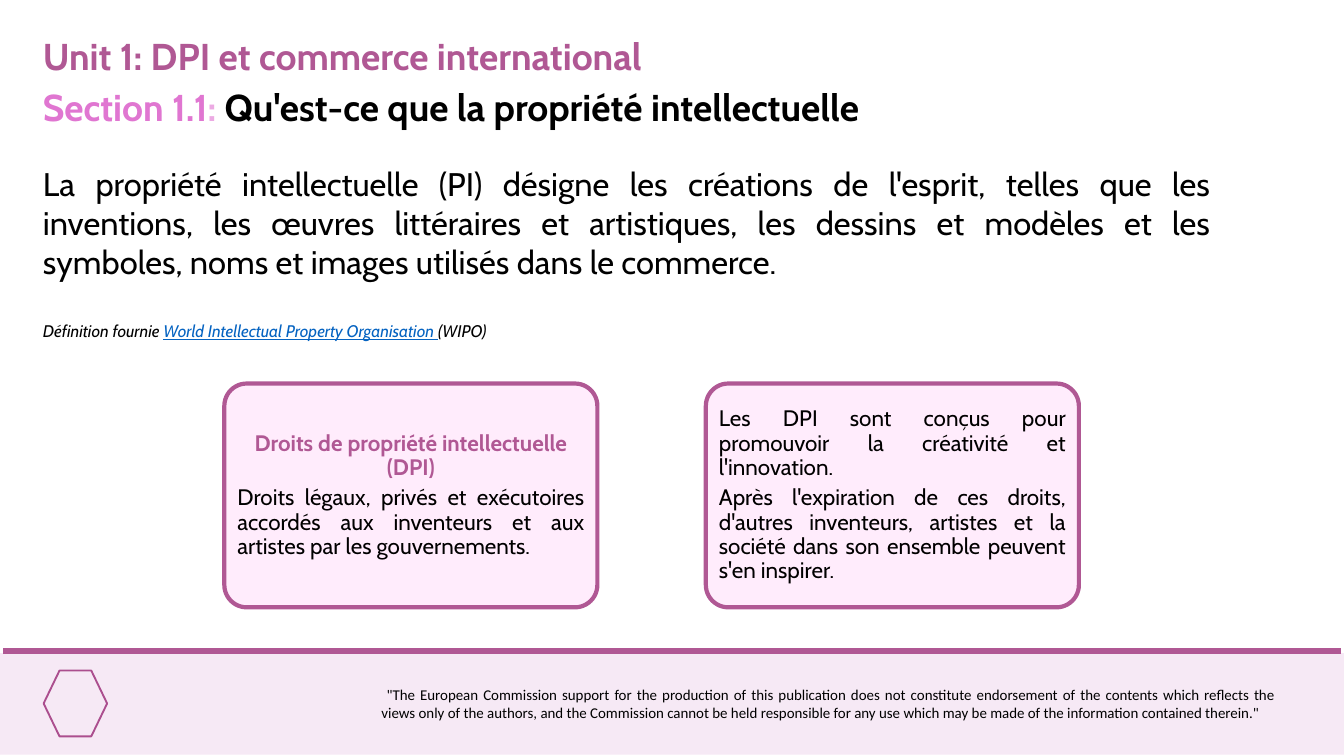
from lxml import etree
from pptx import Presentation
from pptx.dml.color import RGBColor
from pptx.enum.shapes import MSO_CONNECTOR, MSO_SHAPE
from pptx.enum.text import MSO_ANCHOR, MSO_AUTO_SIZE, PP_ALIGN
from pptx.oxml.ns import qn
from pptx.util import Cm, Pt

LEFT, CENTER, JUSTIFY = PP_ALIGN.LEFT, PP_ALIGN.CENTER, PP_ALIGN.JUSTIFY
TOP, MIDDLE = MSO_ANCHOR.TOP, MSO_ANCHOR.MIDDLE
NO_AUTOFIT = MSO_AUTO_SIZE.NONE
RECTANGLE, ROUNDED, HEXAGON = MSO_SHAPE.RECTANGLE, MSO_SHAPE.ROUNDED_RECTANGLE, MSO_SHAPE.HEXAGON
STRAIGHT = MSO_CONNECTOR.STRAIGHT

COLORS = {
    "black": "000000",
    "plum": "B05894",
    "emblem": "AB4E8E",
    "pink": "E076D1",
    "pale_pink": "ECAAE3",
    "card": "FFECFC",
    "band": "F6E9F5",
    "link": "0563C1",
}


class SlideBuilder:
    def __init__(self, slide, font="Cabin"):
        self.slide = slide
        self.font = font

    def color(self, name):
        return RGBColor.from_string(COLORS[name])

    def fill_text(self, frame, paragraphs, anchor=TOP):
        """Each paragraph is (format values, [(text, colour, font values), ...])."""
        for name, value in {"word_wrap": True, "auto_size": NO_AUTOFIT,
                            "vertical_anchor": anchor}.items():
            setattr(frame, name, value)
        for index, (layout, runs) in enumerate(paragraphs):
            paragraph = frame.paragraphs[0] if index == 0 else frame.add_paragraph()
            properties = paragraph._p.get_or_add_pPr()
            properties.set("marL", "0")
            properties.set("indent", "0")
            etree.SubElement(properties, qn("a:buNone"))
            for name, value in {"space_before": Pt(0), **layout}.items():
                setattr(paragraph, name, value)
            for text, color, style in runs:
                run = paragraph.add_run()
                run.text = text
                run.font.color.rgb = self.color(color)
                for name, value in {"name": self.font, **style}.items():
                    setattr(run.font, name, value)

    def placeholder(self, index, box, paragraphs):
        holder = self.slide.placeholders[index]
        holder.left, holder.top, holder.width, holder.height = map(Cm, box)
        self.fill_text(holder.text_frame, paragraphs)

    def text(self, box, paragraphs):
        frame = self.slide.shapes.add_textbox(*map(Cm, box)).text_frame
        self.fill_text(frame, paragraphs)

    def shape(self, kind, box, fill=None, line=None, width=0):
        shape = self.slide.shapes.add_shape(kind, *map(Cm, box))
        shape.shadow.inherit = False
        if fill:
            shape.fill.solid()
            shape.fill.fore_color.rgb = self.color(fill)
        else:
            shape.fill.background()
        if line:
            shape.line.color.rgb = self.color(line)
            shape.line.width = Pt(width)
        else:
            shape.line.fill.background()
        return shape

    def card(self, box, paragraphs):
        card = self.shape(ROUNDED, box, "card", "plum", 4.5)
        card.adjustments[0] = 0.1
        self.fill_text(card.text_frame, paragraphs, MIDDLE)

    def rule(self, left, right, y, color, width):
        rule = self.slide.shapes.add_connector(STRAIGHT, Cm(left), Cm(y), Cm(right), Cm(y))
        rule.line.color.rgb = self.color(color)
        rule.line.width = Pt(width)
        etree.SubElement(rule._element.spPr, qn("a:effectLst"))


def main():
    deck = Presentation()
    deck.slide_width, deck.slide_height = Cm(50.8), Cm(28.58)
    builder = SlideBuilder(deck.slides.add_slide(deck.slide_layouts[1]))
    margin = 1.37
    heading = {"size": Pt(40), "bold": True}
    source = {"size": Pt(18), "italic": True}

    # Footer band with emblem and disclaimer
    builder.shape(RECTANGLE, (0, 24.69, 50.8, 3.84), "band")
    builder.rule(0.13, 50.67, 24.61, "plum", 6.75)
    builder.shape(HEXAGON, (1.65, 25.35, 2.4, 2.49), line="emblem", width=2)
    disclaimer = (
        ' "The European Commission support for the production of this publication does not '
        "constitute endorsement of the contents which reflects the views only of the authors, "
        "and the Commission cannot be held responsible for any use which may be made of the "
        'information contained therein."'
    )
    builder.text((14.17, 25.78, 34.29, 1.63), [
        ({"alignment": JUSTIFY}, [(disclaimer, "black", {"name": "Calibri", "size": Pt(16)})]),
    ])

    # Unit and section headings
    builder.placeholder(0, (margin, 1.12, 24.16, 1.96), [
        ({"alignment": LEFT}, [("Unit 1: DPI et commerce international", "plum", heading)]),
    ])
    builder.text((margin, 3.07, 39.17, 1.96), [
        ({"alignment": LEFT}, [
            ("Section 1.1", "pink", heading),
            (": ", "pale_pink", heading),
            ("Qu'est-ce que la propriété intellectuelle", "black", heading),
        ]),
    ])

    # Definition and its source
    definition = (
        "La propriété intellectuelle (PI) désigne les créations de l'esprit, telles que les "
        "inventions, les œuvres littéraires et artistiques, les dessins et modèles et les "
        "symboles, noms et images utilisés dans le commerce."
    )
    builder.placeholder(1, (margin, 6.07, 44.65, 7.01), [
        ({"alignment": JUSTIFY}, [(definition, "black", {"size": Pt(35)})]),
        ({"alignment": JUSTIFY, "space_before": Pt(42)}, [
            ("Définition fournie ", "black", source),
            ("World Intellectual Property Organisation ", "link", {**source, "underline": True}),
            ("(WIPO)", "black", source),
        ]),
    ])

    # Cards on rights and their purpose
    card_text = {"alignment": JUSTIFY, "line_spacing": 0.9, "space_after": Pt(7)}
    card_title = {**card_text, "alignment": CENTER}
    size = {"size": Pt(24)}
    rights = [
        (card_title, [("Droits de propriété intellectuelle (DPI)", "plum", {**size, "bold": True})]),
        (card_text, [("Droits légaux, privés et exécutoires accordés aux inventeurs et aux "
                      "artistes par les gouvernements.", "black", size)]),
    ]
    purpose = [
        (card_text, [("Les DPI sont conçus pour promouvoir la créativité et l'innovation.",
                      "black", size)]),
        (card_text, [("Après l'expiration de ces droits, d'autres inventeurs, artistes et la "
                      "société dans son ensemble peuvent s'en inspirer.", "black", size)]),
    ]
    for column, paragraphs in enumerate((rights, purpose)):
        builder.card((8.48 + column * 18.2, 14.5, 14.1, 8.46), paragraphs)

    deck.save("out.pptx")


if __name__ == "__main__":
    main()
